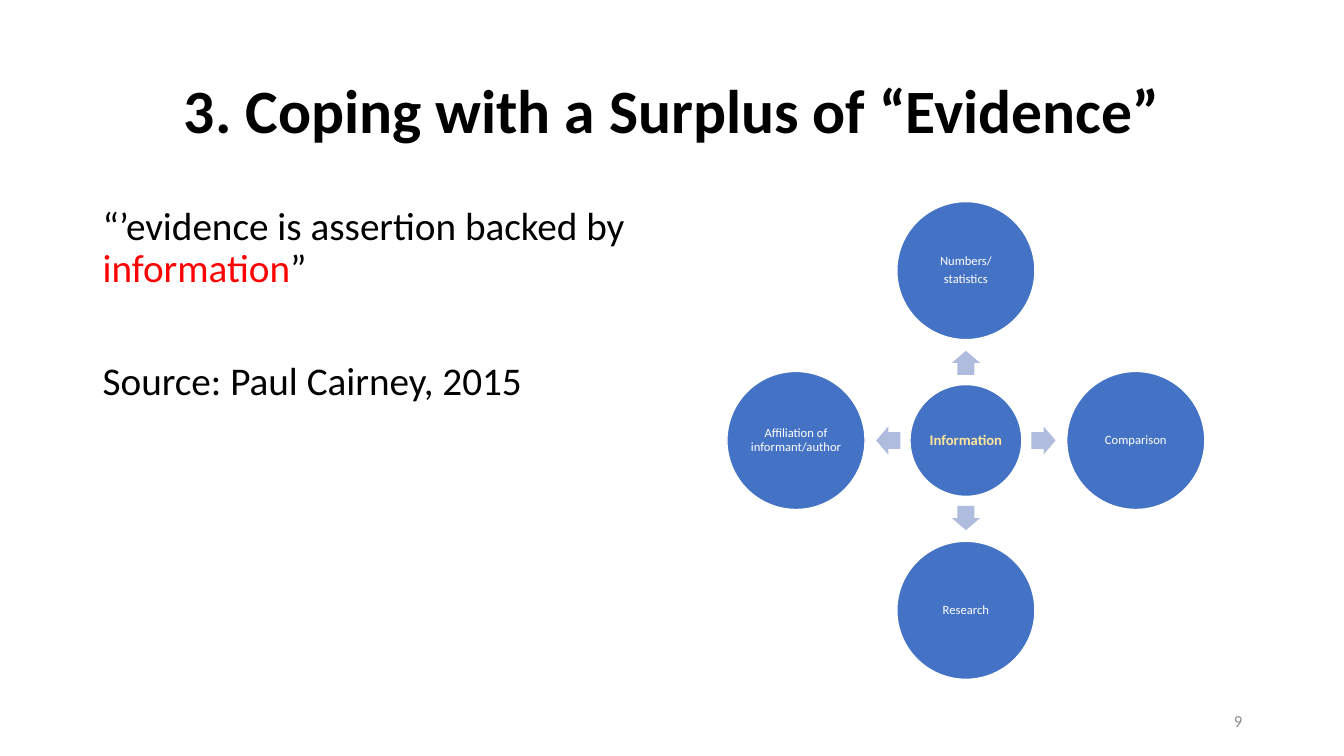
from dataclasses import dataclass

from pptx import Presentation
from pptx.dml.color import RGBColor
from pptx.enum.shapes import MSO_SHAPE
from pptx.enum.text import MSO_ANCHOR, MSO_AUTO_SIZE, PP_ALIGN
from pptx.util import Inches, Pt

OVAL, ARROW = MSO_SHAPE.OVAL, MSO_SHAPE.RIGHT_ARROW
MIDDLE = MSO_ANCHOR.MIDDLE
LEFT, CENTER, RIGHT = PP_ALIGN.LEFT, PP_ALIGN.CENTER, PP_ALIGN.RIGHT


@dataclass(frozen=True)
class Theme:
    """Colours, font and type sizes of the slide."""
    font: str = "Calibri"
    text: str = "000000"
    accent: str = "FF0000"
    circle: str = "4472C4"
    arrow: str = "B0BCDE"
    white: str = "FFFFFF"
    hub_text: str = "FFE699"
    number: str = "8C8C8C"
    title_size: float = 44
    body_size: float = 28
    hub_size: float = 10.5
    node_size: float = 9
    number_size: float = 12


THEME = Theme()


def style_run(r, size, color, bold=False):
    """Format one run."""
    r.font.name, r.font.size, r.font.bold = THEME.font, Pt(size), bold
    r.font.color.rgb = RGBColor.from_string(color)


def style_paragraph(p, align, before=0, after=0, line=0.9):
    """Set the alignment and spacing of one paragraph."""
    p.alignment, p.line_spacing = align, line
    p.space_before, p.space_after = Pt(before), Pt(after)


def add_title(s, box, text):
    """Place and format the title placeholder."""
    sp = s.shapes.title
    sp.left, sp.top, sp.width, sp.height = map(Inches, box)
    tf = sp.text_frame
    tf.text = text
    tf.auto_size, tf.vertical_anchor = MSO_AUTO_SIZE.NONE, MIDDLE
    style_paragraph(tf.paragraphs[0], CENTER)
    style_run(tf.paragraphs[0].runs[0], THEME.title_size, THEME.text, True)


def add_quote(s, box, quote, source):
    """Add the quotation, given as (text, colour) parts, and its source."""
    tf = s.shapes.add_textbox(*map(Inches, box)).text_frame
    tf.word_wrap = True
    p = tf.paragraphs[0]
    style_paragraph(p, LEFT, before=10)
    for text, color in quote:
        r = p.add_run()
        r.text = text
        style_run(r, THEME.body_size, color)
    p = tf.add_paragraph()
    p.text = source
    style_paragraph(p, LEFT, before=50)
    style_run(p.runs[0], THEME.body_size, THEME.text)


def add_centered(s, kind, cx, cy, w, h, fill):
    """Add a filled shape around a centre point."""
    sp = s.shapes.add_shape(kind, Inches(cx - w / 2), Inches(cy - h / 2), Inches(w), Inches(h))
    sp.shadow.inherit = False
    sp.fill.solid()
    sp.fill.fore_color.rgb = RGBColor.from_string(fill)
    return sp


def add_circle(s, cx, cy, diameter, text, size, color, bold=False):
    """Add a labelled circle around a centre point."""
    sp = add_centered(s, OVAL, cx, cy, diameter, diameter, THEME.circle)
    sp.line.color.rgb = RGBColor.from_string(THEME.white)
    sp.line.width = Pt(1)
    tf = sp.text_frame
    tf.text = text
    tf.word_wrap, tf.vertical_anchor = True, MIDDLE
    tf.margin_left = tf.margin_right = tf.margin_top = tf.margin_bottom = Inches(0.01)
    for p in tf.paragraphs:
        style_paragraph(p, CENTER, after=0.35 * size)
        style_run(p.runs[0], size, color, bold)


def add_radial(s, box, hub, labels):
    """Add a hub with arrows to four circles: top, right, bottom, left."""
    x, y, w, h = box
    cx, cy, node = x + w / 2, y + h / 2, 1.37
    reach, arrow_reach = (h - node) / 2, 0.77
    add_circle(s, cx, cy, 1.11, hub, THEME.hub_size, THEME.hub_text, True)
    directions = ((0, -1, 270), (1, 0, 0), (0, 1, 90), (-1, 0, 180))
    for label, (dx, dy, angle) in zip(labels, directions):
        sp = add_centered(s, ARROW, cx + dx * arrow_reach, cy + dy * arrow_reach,
                          0.24, 0.28, THEME.arrow)
        sp.line.fill.background()
        sp.adjustments[0], sp.adjustments[1] = 0.6, 0.5
        sp.rotation = angle
        add_circle(s, cx + dx * reach, cy + dy * reach, node, label,
                   THEME.node_size, THEME.white)


def add_number(s, box, text):
    """Add the slide number."""
    tf = s.shapes.add_textbox(*map(Inches, box)).text_frame
    tf.text = text
    tf.word_wrap, tf.vertical_anchor = True, MIDDLE
    style_paragraph(tf.paragraphs[0], RIGHT, line=1.0)
    style_run(tf.paragraphs[0].runs[0], THEME.number_size, THEME.number)


def main():
    """Build and save the slide."""
    prs = Presentation()
    prs.slide_width, prs.slide_height = Inches(13.33), Inches(7.5)
    s = prs.slides.add_slide(prs.slide_layouts[5])
    add_title(s, (0.92, 0.4, 11.5, 1.45), "3. Coping with a Surplus of “Evidence”")
    quote = (("“’evidence is assertion backed by ", THEME.text),
             ("information", THEME.accent), ("”", THEME.text))
    add_quote(s, (0.92, 2, 5.67, 4.76), quote, "Source: Paul Cairney, 2015")
    add_radial(s, (7.21, 2, 4.74, 4.74), "Information",
               ("Numbers/\nstatistics", "Comparison", "Research",
                "Affiliation of informant/author"))
    add_number(s, (9.42, 6.95, 3, 0.4), "9")
    prs.save("out.pptx")


if __name__ == "__main__":
    main()
